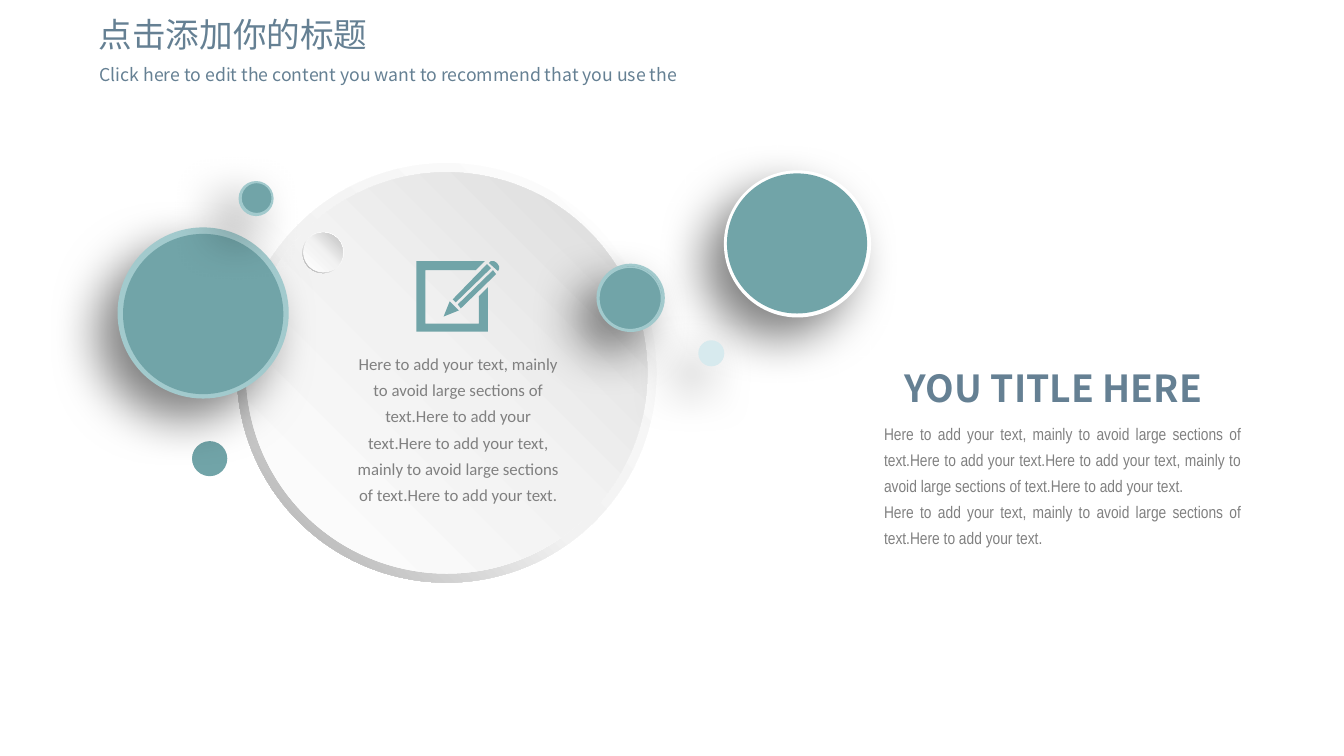
import copy

import pptx
import pptx.dml.color
import pptx.enum.shapes
import pptx.enum.text
import pptx.oxml
import pptx.oxml.ns
import pptx.util

PX = 9144  # 100 px to the inch
COLORS = {
    "teal": "71A4A8", "rim": "A2CACD", "ice": "D7EAEE", "white": "FFFFFF",
    "pale": "F2F2F2", "silver": "D9D9D9", "gray": "BFBFBF", "dark": "A6A6A6",
    "body": "808080", "title": "658093",
}
MSO = pptx.enum.shapes.MSO_SHAPE
ALIGN = pptx.enum.text.PP_ALIGN
NS = pptx.oxml.ns.nsdecls("a")
SHADOW = (
    f'<a:outerShdw {NS} blurRad="{35 * 12700}" dist="{20 * 12700}" '
    f'dir="{135 * 60000}" algn="tr" rotWithShape="0">'
    '<a:srgbClr val="000000"><a:alpha val="50000"/></a:srgbClr></a:outerShdw>'
)


def rgb(name):
    return pptx.dml.color.RGBColor.from_string(COLORS[name])


class Canvas:
    def __init__(self, slide):
        self.shapes = slide.shapes

    def paint(self, sp, fill, line=None, width=2, shadow=False):
        sp.shadow.inherit = False
        if shadow:
            effects = sp._element.spPr.find(pptx.oxml.ns.qn("a:effectLst"))
            effects.append(pptx.oxml.parse_xml(SHADOW))
        sp.fill.solid()
        sp.fill.fore_color.rgb = rgb(fill)
        if line:
            sp.line.color.rgb = rgb(line)
            sp.line.width = pptx.util.Pt(width)
        else:
            sp.line.fill.background()
        return sp

    def circle(self, x, y, d, fill, line=None, width=2, shadow=False, kind=MSO.OVAL):
        sp = self.shapes.add_shape(kind, x * PX, y * PX, d * PX, d * PX)
        if kind == MSO.DONUT:
            sp.adjustments[0] = 0.049
        return self.paint(sp, fill, line, width, shadow)

    def gradient(self, sp, stops, angle):
        """Fill with (percent, colour) stops; angle runs counter-clockwise."""
        sp.fill.gradient()
        sp.fill.gradient_angle = angle
        gs_list = sp._element.spPr.find(".//" + pptx.oxml.ns.qn("a:gsLst"))
        while len(gs_list) < len(stops):
            gs_list.append(copy.deepcopy(gs_list[0]))
        for stop, (percent, color) in zip(sp.fill.gradient_stops, stops):
            stop.position = percent / 100
            stop.color.rgb = rgb(color)

    def dish(self, ring, disc, edge):
        """Gray gradient disc inside a thin ring lit from the other side."""
        sp = self.circle(*ring, "white", kind=MSO.DONUT)
        self.gradient(sp, [(0, "white"), (55, "pale"), (100, "dark")], 225)
        sp = self.circle(*disc, "white")
        self.gradient(sp, [(0, "white"), (51, "pale"), (100, edge)], 45)

    def polygon(self, points, fill):
        builder = self.shapes.build_freeform(*points[0], scale=PX)
        builder.add_line_segments(points[1:], close=True)
        self.paint(builder.convert_to_shape(), fill)

    def text(self, x, y, w, h, paragraphs, size, font, color,
             align=ALIGN.LEFT, spacing=1.3, bold=False, grow=True, top=5):
        tf = self.shapes.add_textbox(x * PX, y * PX, w * PX, h * PX).text_frame
        tf.word_wrap = True
        tf.margin_top = top * PX
        if grow:
            tf.auto_size = pptx.enum.text.MSO_AUTO_SIZE.SHAPE_TO_FIT_TEXT
        for i, words in enumerate(paragraphs):
            p = tf.add_paragraph() if i else tf.paragraphs[0]
            p.text = words
            p.alignment = align
            p.line_spacing = spacing
            p.font.size = pptx.util.Pt(size)
            p.font.name = font
            p.font.bold = bold
            p.font.color.rgb = rgb(color)
            p.font._element.append(
                pptx.oxml.parse_xml(f'<a:ea {NS} typeface="{font}"/>'))


def main():
    prs = pptx.Presentation()
    prs.slide_width, prs.slide_height = 1333 * PX, 750 * PX
    s = Canvas(prs.slides.add_slide(prs.slide_layouts[6]))

    s.dish((235, 162, 416), (244, 171, 398), "silver")
    s.dish((300, 230, 41), (301, 231, 39), "gray")
    s.circle(192, 439, 32, "teal", "teal", kind=MSO.DONUT)
    s.circle(192, 440, 30, "teal", "teal")

    pencil_tip = [(455, 308), (446, 299), (440, 314)]
    pencil_upper = [(483, 262), (449, 297), (452, 300), (487, 266)]
    pencil_lower = [(454, 302), (457, 306), (492, 272), (489, 268)]
    pencil_end = [(493, 261), (490, 259), (487, 259), (485, 261),
                  (494, 269), (495, 267), (495, 264)]
    paper = [(475, 321), (422, 321), (422, 268), (472, 268), (481, 259), (413, 259),
             (413, 329), (484, 329), (484, 285), (475, 294)]
    for outline in (pencil_tip, pencil_upper, pencil_lower, pencil_end, paper):
        s.polygon(outline, "teal")

    short = ("Here to add your text, mainly to avoid large sections of text."
             "Here to add your text.")
    s.text(340, 340, 229, 192, [short + short], 12, "Calibri", "body", ALIGN.CENTER)
    s.text(845, 340, 400, 76, ["YOU TITLE HERE"], 26.6, "Noto Sans CJK SC", "title",
           ALIGN.CENTER, 1.5, bold=True, top=0)
    s.text(867, 409, 374, 171, [short + short, short], 12, "Arial Narrow", "body",
           ALIGN.JUSTIFY)

    s.circle(718, 169, 146, "white", shadow=True)
    s.circle(721, 172, 139, "teal")
    s.circle(118, 227, 167, "rim", "rim", shadow=True)
    s.circle(122, 232, 159, "teal")
    rimmed = [
        ((238, 181, 32), (239, 181, 31), "teal", "rim"),
        ((593, 263, 65), (594, 265, 62), "teal", "rim"),
        ((694, 339, 23), (695, 340, 22), "ice", "ice"),
    ]
    for outer, inner, fill, line in rimmed:
        s.circle(*outer, fill, line, shadow=True)
        s.circle(*inner, fill, line, width=1)

    heading = dict(font="Noto Sans CJK JP", color="title", spacing=0.9,
                   grow=False, top=1)
    s.text(88, 17, 862, 47, ["点击添加你的标题"], 24, **heading)
    s.text(89, 65, 862, 33,
           ["Click here to edit the content you want to recommend that you use the"],
           12.6, **heading)
    prs.save("out.pptx")


if __name__ == "__main__":
    main()
